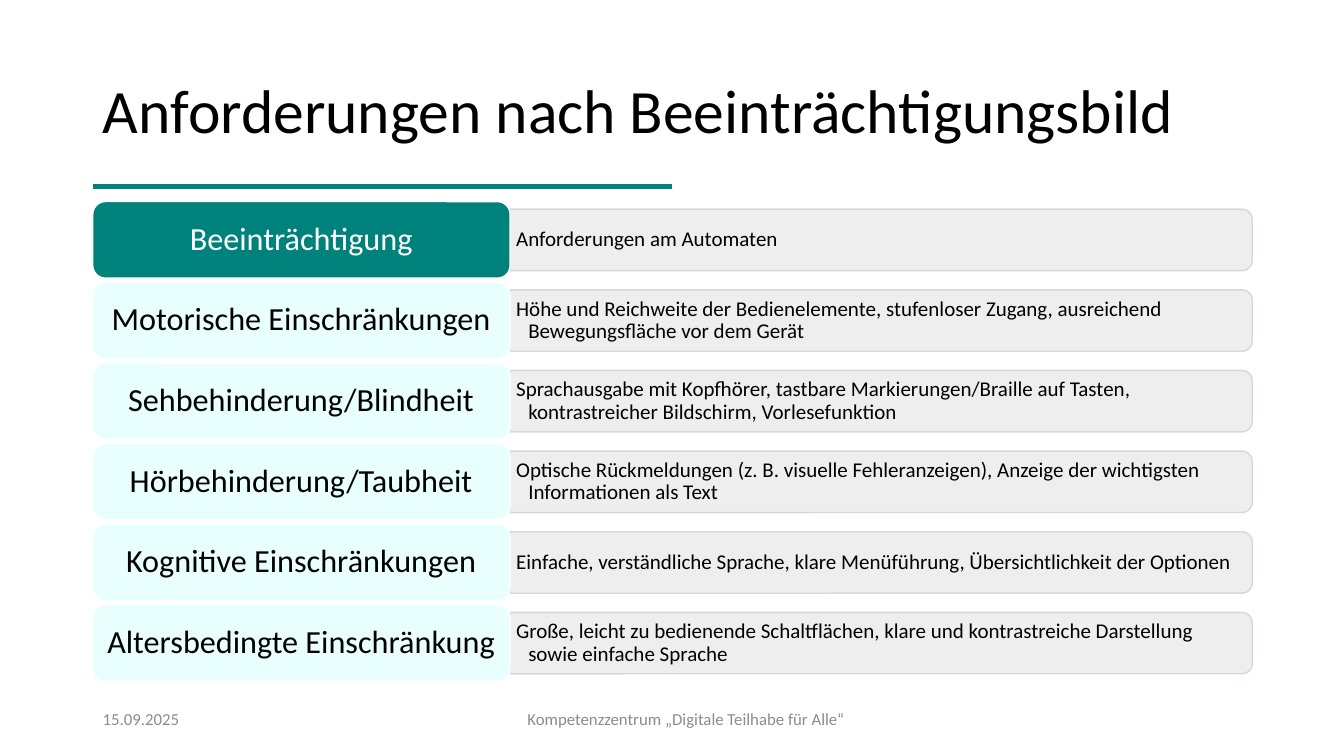
"""Build the slide on access needs by type of impairment."""
from lxml import etree
from pptx import Presentation
from pptx.dml.color import RGBColor
from pptx.enum.shapes import MSO_CONNECTOR, MSO_SHAPE
from pptx.enum.text import MSO_ANCHOR, MSO_AUTO_SIZE, PP_ALIGN
from pptx.oxml.ns import qn
from pptx.util import Inches, Pt

TITLE = "Anforderungen nach Beeinträchtigungsbild"
DATE = "15.09.2025"
FOOTER = "Kompetenzzentrum „Digitale Teilhabe für Alle“"
ROWS = [
    ("Beeinträchtigung", "Anforderungen am Automaten"),
    ("Motorische Einschränkungen",
     "Höhe und Reichweite der Bedienelemente, stufenloser Zugang, "
     "ausreichend Bewegungsfläche vor dem Gerät"),
    ("Sehbehinderung/Blindheit",
     "Sprachausgabe mit Kopfhörer, tastbare Markierungen/Braille auf Tasten, "
     "kontrastreicher Bildschirm, Vorlesefunktion"),
    ("Hörbehinderung/Taubheit",
     "Optische Rückmeldungen (z. B. visuelle Fehleranzeigen), "
     "Anzeige der wichtigsten Informationen als Text"),
    ("Kognitive Einschränkungen",
     "Einfache, verständliche Sprache, klare Menüführung, "
     "Übersichtlichkeit der Optionen"),
    ("Altersbedingte Einschränkung",
     "Große, leicht zu bedienende Schaltflächen, klare und kontrastreiche "
     "Darstellung sowie einfache Sprache"),
]

FONT = "Calibri"
BLACK = RGBColor(0x00, 0x00, 0x00)
WHITE = RGBColor(0xFF, 0xFF, 0xFF)
TEAL = RGBColor(0x00, 0x82, 0x7C)
MINT = RGBColor(0xB3, 0xFF, 0xFB)
PALE = RGBColor(0xED, 0xED, 0xED)
EDGE = RGBColor(0xCC, 0xD8, 0xD7)
GREY = RGBColor(0x8C, 0x8C, 0x8C)
LEFT, CENTER = PP_ALIGN.LEFT, PP_ALIGN.CENTER
MIDDLE = MSO_ANCHOR.MIDDLE
NO_FIT = MSO_AUTO_SIZE.NONE
ROUND = MSO_SHAPE.ROUNDED_RECTANGLE
TOP_ROUND = MSO_SHAPE.ROUND_2_SAME_RECTANGLE
STRAIGHT = MSO_CONNECTOR.STRAIGHT

X, TOP, PITCH = 0.92, 2.0, 0.8
LABEL_W, LABEL_H = 4.14, 0.76
BAR_W, BAR_H = 7.36, 0.61
NEED_W, NEED_H = 7.33, 0.55
HANG = Inches(0.12)


def write(shape, text, size, color, align=LEFT, pad=(0.1, 0.05), gap=0.9):
    frame = shape.text_frame
    frame.text = text
    frame.word_wrap = True
    frame.auto_size = NO_FIT
    frame.vertical_anchor = MIDDLE
    frame.margin_left = frame.margin_right = Inches(pad[0])
    frame.margin_top = frame.margin_bottom = Inches(pad[1])
    para = frame.paragraphs[0]
    para.alignment = align
    para.line_spacing = gap
    font = para.runs[0].font
    font.name, font.size = FONT, Pt(size)
    font.color.rgb = color
    return para


def add_text(slide, box, *args, **style):
    return write(slide.shapes.add_textbox(*map(Inches, box)), *args, **style)


def add_box(slide, kind, box, fill, edge):
    shape = slide.shapes.add_shape(kind, *map(Inches, box))
    shape.shadow.inherit = False
    shape.fill.solid()
    shape.fill.fore_color.rgb = fill
    shape.line.color.rgb = edge
    shape.line.width = Pt(1)
    return shape


def fade(part, share):
    for color in part.iter(qn("a:srgbClr")):
        etree.SubElement(color, qn("a:alpha"), val=str(share * 1000))


def add_row(slide, index, label, need):
    top = TOP + index * PITCH
    mid = top + LABEL_H / 2
    right = X + LABEL_W

    bar_x = right + (BAR_W - BAR_H) / 2
    bar = add_box(slide, TOP_ROUND, (bar_x, mid - BAR_W / 2, BAR_H, BAR_W),
                  PALE, EDGE)
    bar.rotation = 90
    fade(bar.element.spPr, 90)

    para = add_text(slide, (right, mid - NEED_H / 2, NEED_W, NEED_H),
                    need, 15, BLACK, pad=(0.06, 0.03))
    props = para._p.get_or_add_pPr()
    props.set("marL", str(HANG))
    props.set("indent", str(-HANG))

    head = index == 0
    tile = add_box(slide, ROUND, (X, top, LABEL_W, LABEL_H),
                   TEAL if head else MINT, WHITE)
    if not head:
        fade(tile.element.spPr.find(qn("a:solidFill")), 30)
    write(tile, label, 23, WHITE if head else BLACK, CENTER, pad=(0.05, 0.05))


def main():
    deck = Presentation()
    deck.slide_width, deck.slide_height = Inches(13.33), Inches(7.5)
    slide = deck.slides.add_slide(deck.slide_layouts[5])

    title = slide.shapes.title
    title.left, title.top = Inches(X), Inches(0.4)
    title.width, title.height = Inches(11.5), Inches(1.45)
    write(title, TITLE, 44, BLACK)

    rule = slide.shapes.add_connector(
        STRAIGHT, Inches(X), Inches(1.85), Inches(6.67), Inches(1.85))
    rule.line.color.rgb = TEAL
    rule.line.width = Pt(3)
    etree.SubElement(rule.element.spPr, qn("a:effectLst"))

    for index, row in enumerate(ROWS):
        add_row(slide, index, *row)

    add_text(slide, (X, 7.04, 1.12, 0.19), DATE, 12, GREY, gap=1.0)
    add_text(slide, (2.04, 7.04, 9.53, 0.19), FOOTER, 12, GREY, CENTER, gap=1.0)
    deck.save("out.pptx")


if __name__ == "__main__":
    main()
